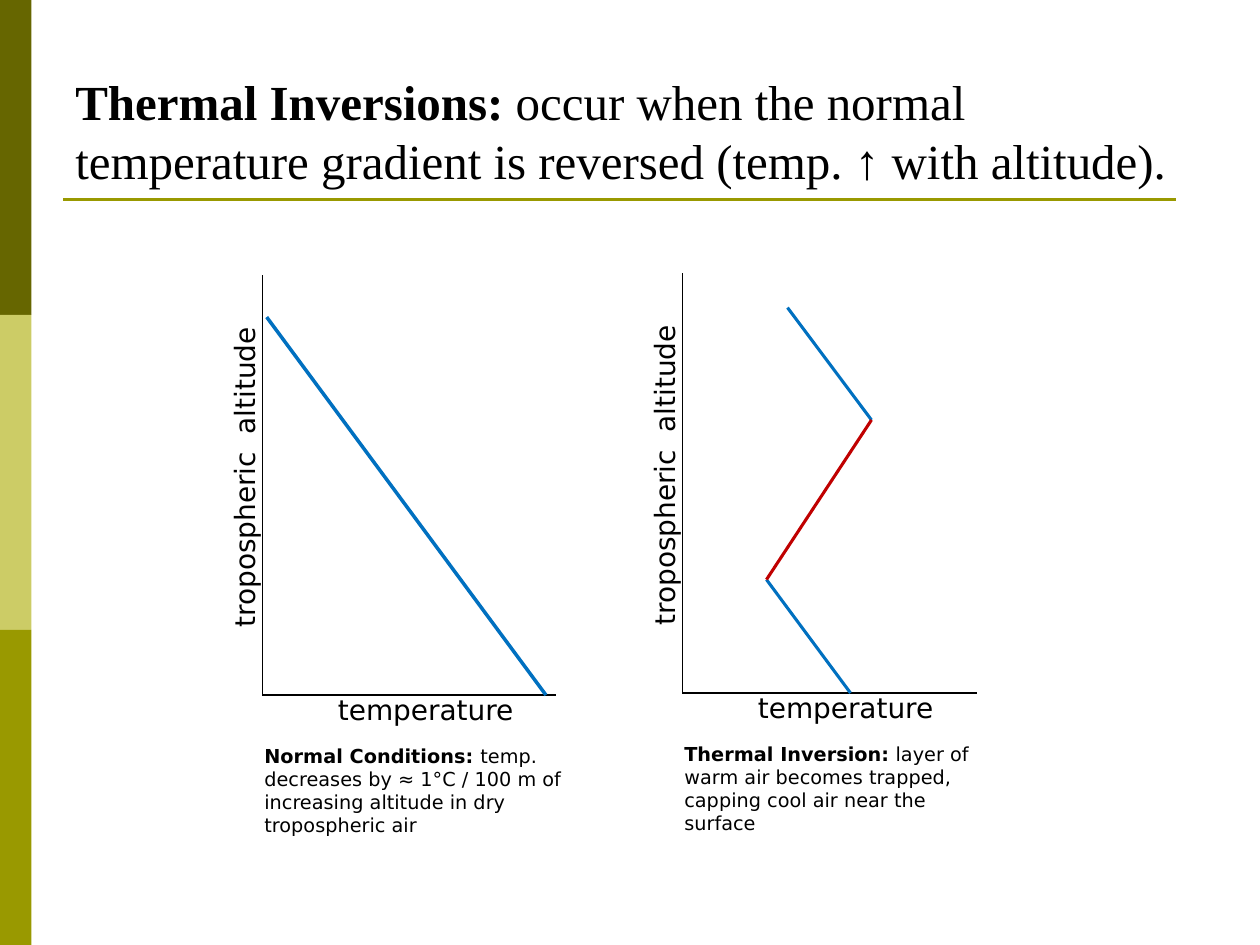
from dataclasses import dataclass

from lxml import etree
from pptx import Presentation
from pptx import util as u
from pptx.dml.color import RGBColor
from pptx.enum import shapes, text
from pptx.oxml.ns import qn

EMU_PER_PX = 7620


@dataclass(frozen=True)
class Theme:
    ink: str = "000000"
    dark: str = "666600"
    light: str = "CCCC66"
    olive: str = "999900"
    normal: str = "0070C0"
    inverted: str = "C00000"
    title_font: str = "Times New Roman"
    body_font: str = "DejaVu Sans"
    title_size: int = 28
    label_size: int = 16
    caption_size: int = 11


@dataclass(frozen=True)
class Segment:
    start: tuple[int, int]
    end: tuple[int, int]
    color: str


@dataclass(frozen=True)
class Plot:
    x: int
    y: int
    segments: tuple[Segment, ...]
    weight: float
    lead: str
    detail: str


THEME = Theme()
AXIS_W, AXIS_H = 280, 400

PLOTS = (
    Plot(250, 662, (Segment((270, 0), (4, -360), THEME.normal),), 2,
         "Normal Conditions: ",
         "temp. decreases by ≈ 1°C / 100 m of increasing altitude in dry tropospheric air"),
    Plot(650, 660, (
        Segment((160, 0), (80, -108), THEME.normal),
        Segment((180, -260), (100, -367), THEME.normal),
        Segment((80, -108), (180, -260), THEME.inverted),
    ), 1.75,
         "Thermal Inversion:",
         " layer of warm air becomes trapped, capping cool air near the surface"),
)


def px(n: int) -> u.Emu:
    return u.Emu(n * EMU_PER_PX)


def add_band(s, top: int, color: str) -> None:
    sp = s.shapes.add_shape(shapes.MSO_SHAPE.RECTANGLE, px(0), px(top), px(30), px(300))
    sp.shadow.inherit = False
    sp.fill.solid()
    sp.fill.fore_color.rgb = RGBColor.from_string(color)
    sp.line.fill.background()


def add_line(s, start: tuple[int, int], end: tuple[int, int], color: str, weight: float) -> None:
    sp = s.shapes.add_connector(shapes.MSO_CONNECTOR.STRAIGHT, *map(px, start + end))
    sp.line.color.rgb = RGBColor.from_string(color)
    sp.line.width = u.Pt(weight)
    etree.SubElement(sp._element.spPr, qn("a:effectLst"))


def add_text(s, box: tuple[int, int, int, int], size: int, plain: str, lead: str = "",
             font: str = THEME.body_font, anchor=text.MSO_ANCHOR.TOP, rotation: int = 0) -> None:
    sp = s.shapes.add_textbox(*map(px, box))
    sp.rotation = rotation
    tf = sp.text_frame
    tf.word_wrap = True
    tf.vertical_anchor = anchor
    p = tf.paragraphs[0]
    for words, bold in ((lead, True), (plain, False)):
        if words:
            r = p.add_run()
            r.text = words
            r.font.name = font
            r.font.size = u.Pt(size)
            r.font.bold = bold
            r.font.color.rgb = RGBColor.from_string(THEME.ink)


def add_plot(s, plot: Plot) -> None:
    x, y = plot.x, plot.y
    for end in ((x, y - AXIS_H), (x + AXIS_W, y)):
        add_line(s, (x, y), end, THEME.ink, 0.75)
    add_text(s, (x - 192, y - 249, 349, 44), THEME.label_size,
             "tropospheric  altitude", rotation=270)
    add_text(s, (x + 60, y - 8, 220, 44), THEME.label_size, "temperature")
    for seg in plot.segments:
        start, end = ((x + dx, y + dy) for dx, dy in (seg.start, seg.end))
        add_line(s, start, end, seg.color, plot.weight)
    add_text(s, (x - 10, y + 41, 310, 80), THEME.caption_size, plot.detail, plot.lead)


def main() -> None:
    prs = Presentation()
    prs.slide_width, prs.slide_height = px(1200), px(900)
    s = prs.slides.add_slide(prs.slide_layouts[6])
    for i, color in enumerate((THEME.dark, THEME.light, THEME.olive)):
        add_band(s, i * 300, color)
    add_line(s, (60, 190), (1120, 190), THEME.olive, 1.5)
    add_text(s, (60, 36, 1080, 150), THEME.title_size,
             " occur when the normal temperature gradient is reversed (temp. ↑ with altitude).",
             "Thermal Inversions:", THEME.title_font, text.MSO_ANCHOR.BOTTOM)
    for plot in PLOTS:
        add_plot(s, plot)
    prs.save("out.pptx")


if __name__ == "__main__":
    main()
